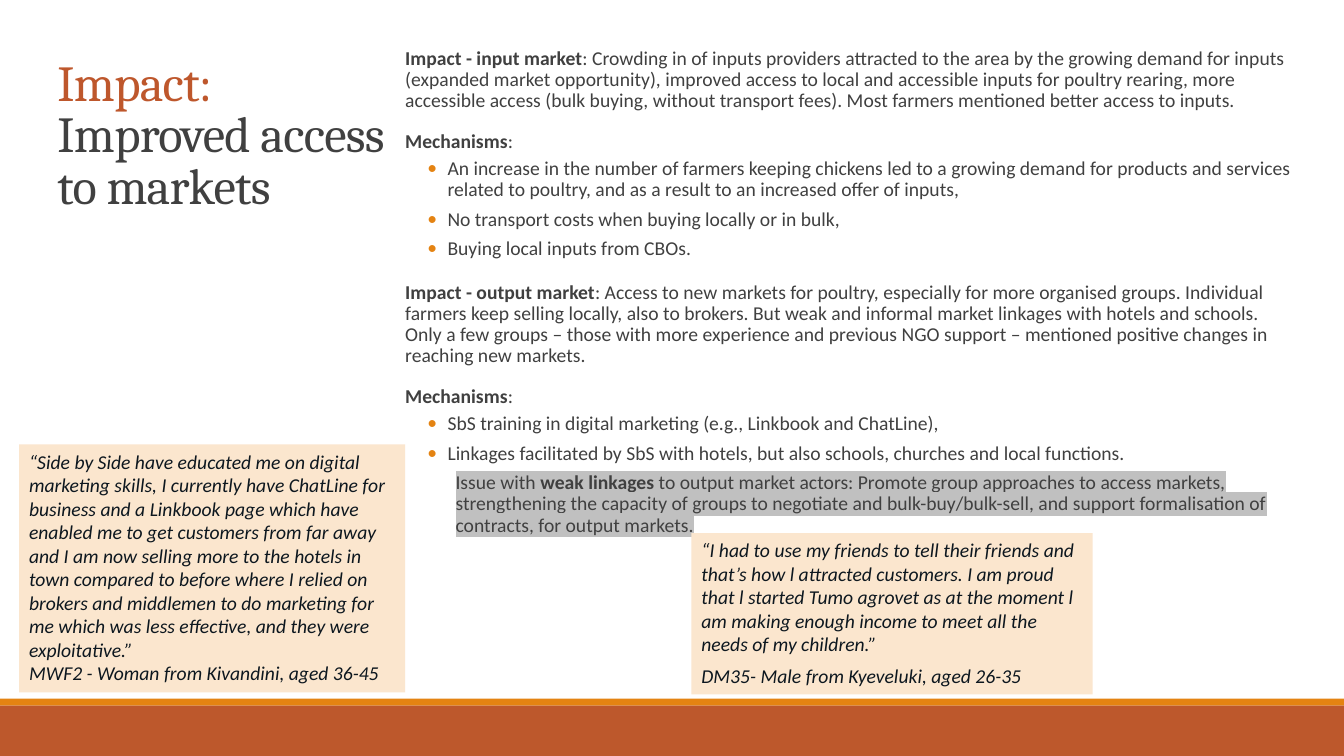
from dataclasses import dataclass

from lxml.etree import SubElement
from pptx import Presentation
from pptx.dml.color import RGBColor
from pptx.enum.shapes import MSO_SHAPE
from pptx.enum.text import MSO_ANCHOR, MSO_AUTO_SIZE as AutoSize, PP_ALIGN
from pptx.oxml.ns import qn
from pptx.util import Pt


@dataclass(frozen=True)
class Theme:
    accent: str = "BE572C"
    footer: str = "BD582C"
    orange: str = "E48312"
    body: str = "404040"
    quote: str = "0D171F"
    quote_fill: str = "FBE6CE"
    highlight: str = "C0C0C0"
    title_font: str = "Cambria"
    body_font: str = "Calibri"
    title_size: float = 36
    body_size: float = 14


THEME = Theme()


@dataclass(frozen=True)
class Box:
    left: float
    top: float
    width: float
    height: float

    def lengths(self) -> tuple:
        return Pt(self.left), Pt(self.top), Pt(self.width), Pt(self.height)


@dataclass(frozen=True)
class Span:
    text: str
    bold: bool = False


@dataclass(frozen=True)
class Para:
    spans: tuple[Span, ...]
    before: float = 12
    after: float = 2
    level: int = 0
    bullet: bool = False
    highlight: bool = False


@dataclass(frozen=True)
class Quote:
    box: Box
    words: str
    speaker: str
    gap: float


@dataclass(frozen=True)
class Band:
    box: Box
    colour: str


def lead(label: str, rest: str) -> Para:
    return Para((Span(label, bold=True), Span(rest)))


def point(text: str) -> Para:
    return Para((Span(text),), before=2, after=4, level=1, bullet=True)


TITLE_BOX = Box(33.84, 39.6, 255.6, 225.4)
TITLE_SPANS = (("Impact: ", THEME.accent), ("Improved access to markets", THEME.body))

FINDINGS_BOX = Box(289.44, 30.96, 636.5, 350)
FINDINGS = (
    lead("Impact - input market",
         ": Crowding in of inputs providers attracted to the area by the growing demand for "
         "inputs (expanded market opportunity), improved access to local and accessible inputs "
         "for poultry rearing, more accessible access (bulk buying, without transport fees). "
         "Most farmers mentioned better access to inputs."),
    lead("Mechanisms", ":"),
    point("An increase in the number of farmers keeping chickens led to a growing demand for "
          "products and services related to poultry, and as a result to an increased offer of "
          "inputs,"),
    point("No transport costs when buying locally or in bulk,"),
    point("Buying local inputs from CBOs."),
    lead("Impact - output market",
         ": Access to new markets for poultry, especially for more organised groups. Individual "
         "farmers keep selling locally, also to brokers. But weak and informal market linkages "
         "with hotels and schools. Only a few groups – those with more experience and previous "
         "NGO support – mentioned positive changes in reaching new markets."),
    lead("Mechanisms", ":"),
    point("SbS training in digital marketing (e.g., Linkbook and ChatLine),"),
    point("Linkages facilitated by SbS with hotels, but also schools, churches and local "
          "functions."),
    Para((Span("Issue with "), Span("weak linkages ", bold=True),
          Span("to output market actors: Promote group approaches to access markets, "
               "strengthening the capacity of groups to negotiate and bulk-buy/bulk-sell, and "
               "support formalisation of contracts, for output markets.")),
         before=2, after=4, level=1, highlight=True),
)

QUOTES = (
    Quote(Box(13.68, 317.5, 275.8, 177.1),
          "“Side by Side have educated me on digital marketing skills, I currently have ChatLine "
          "for business and a Linkbook page which have enabled me to get customers from far away "
          "and I am now selling more to the hotels in town compared to before where I relied on "
          "brokers and middlemen to do marketing for me which was less effective, and they were "
          "exploitative.”",
          "MWF2 - Woman from Kivandini, aged 36-45", gap=0),
    Quote(Box(493.9, 380.9, 286.6, 115.2),
          "“I had to use my friends to tell their friends and that’s how l attracted customers. "
          "I am proud that l started Tumo agrovet as at the moment l am making enough income to "
          "meet all the needs of my children.”",
          "DM35- Male from Kyeveluki, aged 26-35", gap=6),
)

BANDS = (
    Band(Box(0, 499, 960, 5), THEME.orange),
    Band(Box(0, 504, 960, 36), THEME.footer),
)


def add_run(paragraph, text: str, colour: str, font: str = THEME.body_font,
            size: float = THEME.body_size, bold: bool = False, italic: bool = False):
    run = paragraph.add_run()
    run.text = text
    run.font.name = font
    run.font.size = Pt(size)
    run.font.bold = bold
    run.font.italic = italic
    run.font.color.rgb = RGBColor.from_string(colour)
    return run


def next_paragraph(frame, index: int):
    return frame.add_paragraph() if index else frame.paragraphs[0]


def set_bullet(paragraph) -> None:
    props = paragraph._p.get_or_add_pPr()
    props.set("marL", str(Pt(30.24)))
    props.set("indent", str(Pt(-14.4)))
    colour = SubElement(props, qn("a:buClr"))
    SubElement(colour, qn("a:srgbClr"), val=THEME.orange)
    SubElement(props, qn("a:buFont"), typeface=THEME.body_font)
    SubElement(props, qn("a:buChar"), char="•")


def set_highlight(run) -> None:
    props = run._r.get_or_add_rPr()
    highlight = SubElement(props, qn("a:highlight"))
    SubElement(highlight, qn("a:srgbClr"), val=THEME.highlight)
    props.find(qn("a:latin")).addprevious(highlight)


def add_title(slide) -> None:
    title = slide.shapes.title
    title.left, title.top, title.width, title.height = TITLE_BOX.lengths()
    frame = title.text_frame
    frame.word_wrap = True
    frame.auto_size = AutoSize.NONE
    frame.vertical_anchor = MSO_ANCHOR.TOP
    heading = frame.paragraphs[0]
    heading.alignment = PP_ALIGN.LEFT
    heading.line_spacing = 0.85
    for text, colour in TITLE_SPANS:
        run = add_run(heading, text, colour, THEME.title_font, THEME.title_size)
        run._r.get_or_add_rPr().set("spc", "-50")


def add_findings(slide) -> None:
    frame = slide.shapes.add_textbox(*FINDINGS_BOX.lengths()).text_frame
    frame.word_wrap = True
    frame.margin_left = frame.margin_right = Pt(0)
    for index, finding in enumerate(FINDINGS):
        paragraph = next_paragraph(frame, index)
        paragraph.level = finding.level
        paragraph.line_spacing = 0.9
        paragraph.space_before = Pt(finding.before)
        paragraph.space_after = Pt(finding.after)
        if finding.bullet:
            set_bullet(paragraph)
        for span in finding.spans:
            run = add_run(paragraph, span.text, THEME.body, bold=span.bold)
            if finding.highlight:
                set_highlight(run)


def add_band(slide, band: Band) -> None:
    stripe = slide.shapes.add_shape(MSO_SHAPE.RECTANGLE, *band.box.lengths())
    stripe.shadow.inherit = False
    stripe.fill.solid()
    stripe.fill.fore_color.rgb = RGBColor.from_string(band.colour)
    stripe.line.fill.background()


def add_quote(slide, quote: Quote) -> None:
    card = slide.shapes.add_textbox(*quote.box.lengths())
    card.fill.solid()
    card.fill.fore_color.rgb = RGBColor.from_string(THEME.quote_fill)
    frame = card.text_frame
    frame.word_wrap = True
    frame.auto_size = AutoSize.SHAPE_TO_FIT_TEXT
    for index, text in enumerate((quote.words, quote.speaker)):
        paragraph = next_paragraph(frame, index)
        paragraph.space_after = Pt(quote.gap)
        add_run(paragraph, text, THEME.quote, italic=True)


def main() -> None:
    deck = Presentation()
    deck.slide_width, deck.slide_height = Pt(960), Pt(540)
    slide = deck.slides.add_slide(deck.slide_layouts[5])
    add_title(slide)
    add_findings(slide)
    for band in BANDS:
        add_band(slide, band)
    for quote in QUOTES:
        add_quote(slide, quote)
    deck.save("out.pptx")


if __name__ == "__main__":
    main()
